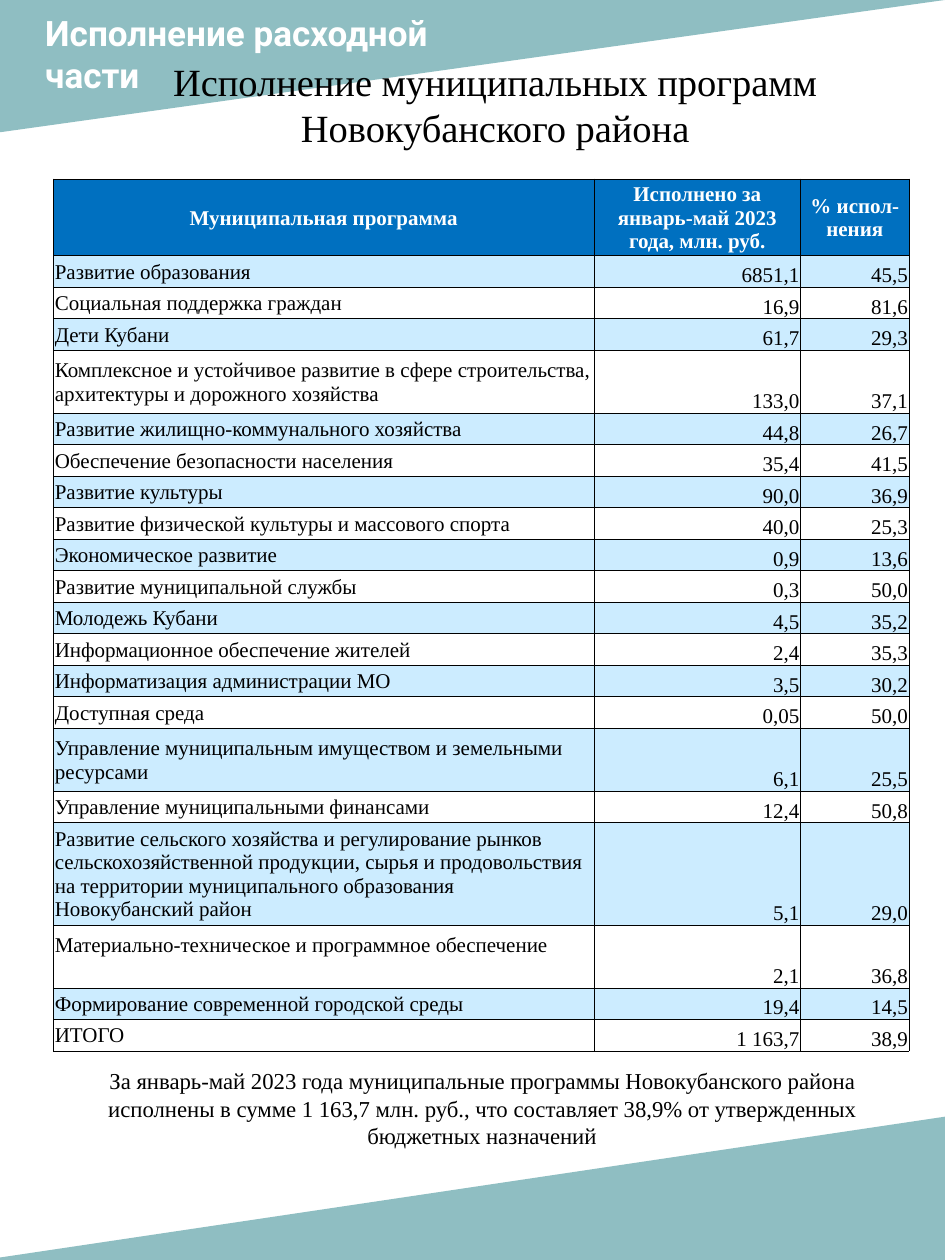
from typing import NamedTuple

from lxml import etree
from pptx import Presentation
from pptx.dml.color import RGBColor
from pptx.enum import shapes, text
from pptx.oxml import ns
from pptx.util import Emu, Inches, Pt

WIDTH, HEIGHT = Inches(7.5), Inches(10)
COL, ROW = WIDTH / 100, HEIGHT / 100  # the slide is a grid of 100 by 100

WHITE = RGBColor(0xFF, 0xFF, 0xFF)
BLACK = RGBColor(0, 0, 0)
TEAL = RGBColor(0x51, 0x9A, 0xA0)
HEADER_BLUE = RGBColor(0x00, 0x70, 0xC0)
BAND_BLUE = RGBColor(0xCC, 0xEC, 0xFF)
SERIF, SANS = "Times New Roman", "Roboto"

LEFT, CENTER, RIGHT = text.PP_ALIGN.LEFT, text.PP_ALIGN.CENTER, text.PP_ALIGN.RIGHT
TOP, MIDDLE, BOTTOM = (text.MSO_ANCHOR.TOP, text.MSO_ANCHOR.MIDDLE,
                       text.MSO_ANCHOR.BOTTOM)


class Box(NamedTuple):
    """Left, top, width and height in grid columns and rows."""
    x: float
    y: float
    w: float
    h: float

    def emu(self) -> tuple:
        return (Emu(round(self.x * COL)), Emu(round(self.y * ROW)),
                Emu(round(self.w * COL)), Emu(round(self.h * ROW)))


class Style(NamedTuple):
    size: float
    color: RGBColor = BLACK
    name: str = SERIF
    bold: bool = False
    align: int = CENTER


class Wedge(NamedTuple):
    box: Box
    flip: str


class Program(NamedTuple):
    name: str
    spent: str
    percent: str
    units: int = 1  # row height in quarter inches
    bottom: float = 0  # bottom inset of the name, inches


WEDGES = [Wedge(Box(0, 0, 100, 10.5), "flipV"),
          Wedge(Box(-1.73, 88.6, 102, 11.4), "flipH")]

HEADERS = ["Муниципальная программа", "Исполнено за январь-май 2023 года, млн. руб.",
           "% испол-нения"]
HEADER_UNITS = 2
ROW_UNIT = Inches(0.25)
TABLE_BOX = Box(5.67, 14.2, 90.53, 69.9)
COLUMNS = [57.2, 21.86, 11.47]

PROGRAMS = [
    Program("Развитие образования", "6851,1", "45,5"),
    Program("Социальная поддержка граждан", "16,9", "81,6"),
    Program("Дети Кубани", "61,7", "29,3"),
    Program("Комплексное и устойчивое развитие в сфере строительства, "
            "архитектуры и дорожного хозяйства", "133,0", "37,1", 2),
    Program("Развитие жилищно-коммунального хозяйства", "44,8", "26,7"),
    Program("Обеспечение безопасности населения", "35,4", "41,5"),
    Program("Развитие культуры", "90,0", "36,9"),
    Program("Развитие физической культуры и массового спорта", "40,0", "25,3"),
    Program("Экономическое развитие", "0,9", "13,6"),
    Program("Развитие муниципальной службы", "0,3", "50,0"),
    Program("Молодежь Кубани", "4,5", "35,2"),
    Program("Информационное обеспечение жителей", "2,4", "35,3"),
    Program("Информатизация администрации МО", "3,5", "30,2"),
    Program("Доступная среда", "0,05", "50,0"),
    Program("Управление муниципальным имуществом и земельными ресурсами",
            "6,1", "25,5", 2),
    Program("Управление муниципальными финансами", "12,4", "50,8"),
    Program("Развитие сельского хозяйства и регулирование рынков "
            "сельскохозяйственной продукции, сырья и продовольствия на территории "
            "муниципального образования Новокубанский район", "5,1", "29,0", 3),
    Program("Материально-техническое и программное обеспечение",
            "2,1", "36,8", 2, 0.18),
    Program("Формирование современной городской среды", "19,4", "14,5"),
    Program("ИТОГО", "1 163,7", "38,9"),
]

HEADER_STYLE = Style(12, WHITE, bold=True)
NAME_STYLE = Style(12, align=LEFT)
VALUE_STYLE = Style(12, align=RIGHT)


def write(tf, content: str, style: Style) -> None:
    tf.text = content
    for p in tf.paragraphs:
        p.alignment = style.align
        p.font.size = Pt(style.size)
        p.font.name = style.name
        p.font.bold = style.bold
        p.font.color.rgb = style.color


def add_wedge(slide, wedge: Wedge) -> None:
    sp = slide.shapes.add_shape(shapes.MSO_SHAPE.RIGHT_TRIANGLE, *wedge.box.emu())
    sp.shadow.inherit = False
    sp.line.fill.background()
    sp.fill.solid()
    sp.fill.fore_color.rgb = TEAL
    color = sp.element.spPr.find(".//" + ns.qn("a:srgbClr"))
    etree.SubElement(color, ns.qn("a:alpha"), val="64000")
    sp.element.spPr.find(ns.qn("a:xfrm")).set(wedge.flip, "1")


def add_text(slide, box: Box, content: str, style: Style) -> None:
    sp = slide.shapes.add_textbox(*box.emu())
    sp.text_frame.word_wrap = True
    write(sp.text_frame, content, style)


def place_title(slide, box: Box, content: str, style: Style) -> None:
    """Format the title placeholder and bring it in front of the wedges."""
    sp = slide.shapes.title
    sp.left, sp.top, sp.width, sp.height = box.emu()
    tf = sp.text_frame
    tf.word_wrap = True
    tf.auto_size = text.MSO_AUTO_SIZE.NONE
    tf.vertical_anchor = TOP
    write(tf, content, style)
    slide.shapes.element.append(sp.element)


def add_borders(cell) -> None:
    props = cell._tc.get_or_add_tcPr()
    for i, side in enumerate(("lnL", "lnR", "lnT", "lnB")):
        ln = etree.Element(ns.qn("a:" + side), w=str(Pt(0.5)))
        fill = etree.SubElement(ln, ns.qn("a:solidFill"))
        etree.SubElement(fill, ns.qn("a:srgbClr"), val=str(BLACK))
        props.insert(i, ln)


def fill_cell(cell, content: str, style: Style, anchor: int, color: RGBColor,
              bottom: float = 0) -> None:
    cell.margin_left = cell.margin_right = cell.margin_top = Inches(0.01)
    cell.margin_bottom = Inches(bottom)
    cell.vertical_anchor = anchor
    cell.fill.solid()
    cell.fill.fore_color.rgb = color
    write(cell.text_frame, content, style)
    add_borders(cell)


def add_program_table(slide) -> None:
    table = slide.shapes.add_table(len(PROGRAMS) + 1, len(HEADERS),
                                   *TABLE_BOX.emu()).table
    table.first_row = table.horz_banding = False
    for column, width in zip(table.columns, COLUMNS):
        column.width = Emu(round(width * COL))
    table.rows[0].height = HEADER_UNITS * ROW_UNIT
    for c, header in enumerate(HEADERS):
        fill_cell(table.cell(0, c), header, HEADER_STYLE, MIDDLE, HEADER_BLUE)
    for r, program in enumerate(PROGRAMS, start=1):
        table.rows[r].height = program.units * ROW_UNIT
        color = BAND_BLUE if r % 2 else WHITE
        fill_cell(table.cell(r, 0), program.name, NAME_STYLE, MIDDLE, color,
                  program.bottom)
        for c, value in enumerate((program.spent, program.percent), start=1):
            fill_cell(table.cell(r, c), value, VALUE_STYLE, BOTTOM, color)


def main() -> None:
    prs = Presentation()
    prs.slide_width, prs.slide_height = WIDTH, HEIGHT
    slide = prs.slides.add_slide(prs.slide_layouts.get_by_name("Title Only"))
    for wedge in WEDGES:
        add_wedge(slide, wedge)
    add_text(slide, Box(3.47, 0.4, 65, 7.7), "Исполнение расходной\nчасти",
             Style(20, WHITE, SANS, True, LEFT))
    place_title(slide, Box(8.53, 4.1, 87.73, 8.3),
                "Исполнение муниципальных программ Новокубанского района", Style(22))
    add_text(slide, Box(5.73, 84.2, 90.53, 7.6),
             "За январь-май 2023 года муниципальные программы Новокубанского района "
             "исполнены в сумме 1 163,7 млн. руб., что составляет 38,9% от "
             "утвержденных бюджетных назначений", Style(13))
    add_program_table(slide)
    prs.save("out.pptx")


if __name__ == "__main__":
    main()
